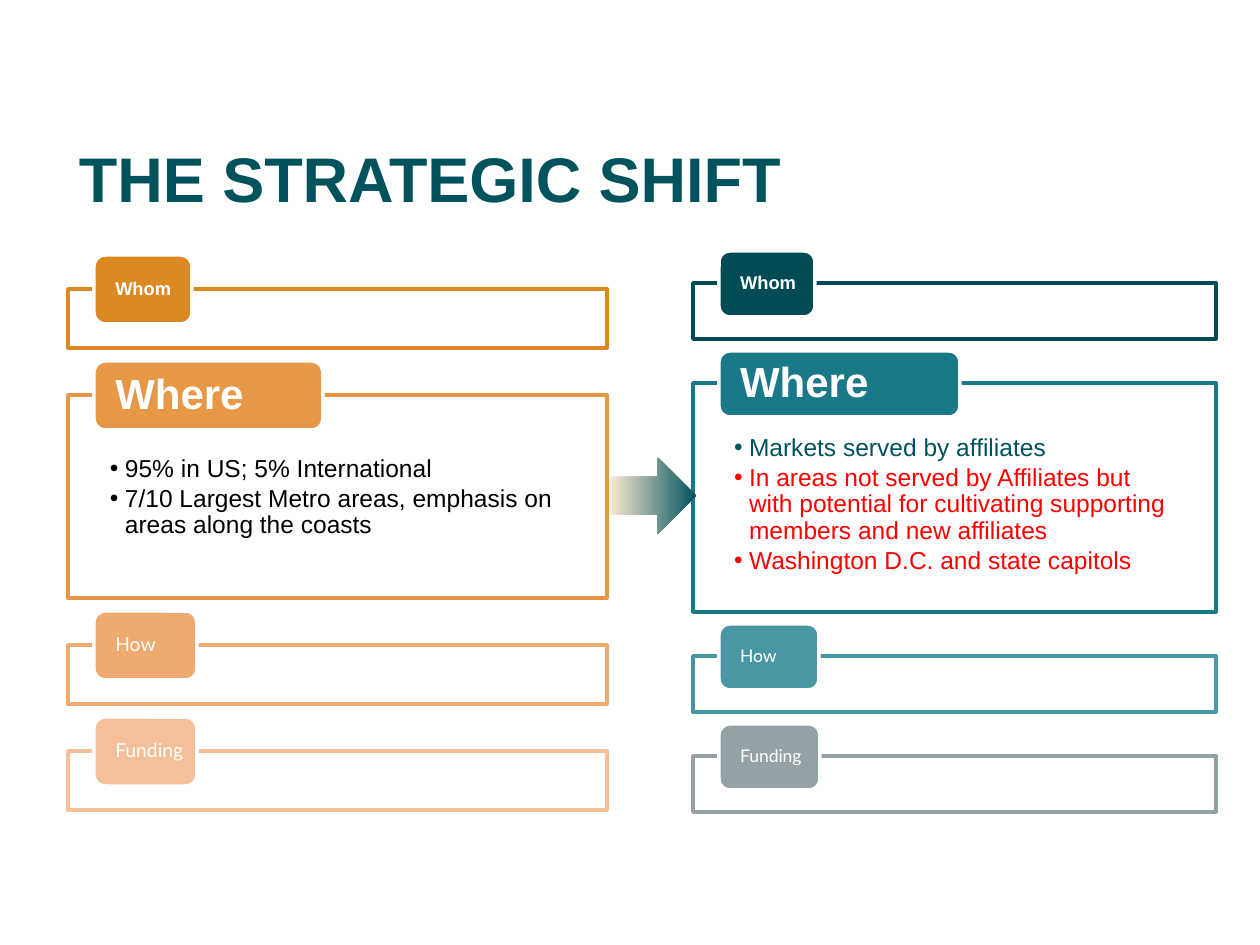
from dataclasses import dataclass

from lxml import etree
from pptx import Presentation
from pptx.dml.color import RGBColor
from pptx.enum.shapes import MSO_SHAPE
from pptx.enum.text import MSO_ANCHOR, PP_ALIGN
from pptx.oxml.ns import qn
from pptx.util import Pt

RECT, TAB, ARROW = MSO_SHAPE.RECTANGLE, MSO_SHAPE.ROUNDED_RECTANGLE, MSO_SHAPE.RIGHT_ARROW
TOP, MIDDLE, LEFT = MSO_ANCHOR.TOP, MSO_ANCHOR.MIDDLE, PP_ALIGN.LEFT


@dataclass(frozen=True)
class Theme:
    font: str = "Arial"
    light_font: str = "Lato"
    white: str = "FFFFFF"
    black: str = "000000"
    teal: str = "00535D"
    red: str = "FF0000"
    sand: str = "FCEAD3"
    title_pt: float = 36
    where_pt: float = 24
    body_pt: float = 14
    whom_pt: float = 10.5
    line_pt: float = 2


T = Theme()


@dataclass(frozen=True)
class Bullet:
    text: str
    color: str


@dataclass(frozen=True)
class Row:
    label: str
    color: str
    height: int
    tab_width: int
    size: float
    font: str = T.font
    bold: bool = True
    bullets: tuple[Bullet, ...] = ()


@dataclass(frozen=True)
class Column:
    left: int
    top: int
    width: int
    gap: int
    tab_rise: int
    tab_height: int
    inset: int
    body_top: int
    rows: tuple[Row, ...]


COLUMNS = (
    Column(68, 289, 539, 47, 34, 69, 42, 61, (
        Row("Whom", "DB8922", 59, 98, T.whom_pt),
        Row("Where", "E69847", 203, 229, T.where_pt, bullets=(
            Bullet("95% in US; 5% International", T.black),
            Bullet("7/10 Largest Metro areas, emphasis on areas along the coasts", T.black))),
        Row("How", "EEAA6F", 59, 103, 11, T.light_font, False),
        Row("Funding", "F5BF9A", 59, 103, 11, T.light_font, False))),
    Column(693, 283, 523, 44, 32, 66, 41, 52, (
        Row("Whom", "004B54", 56, 96, T.whom_pt),
        Row("Where", "197989", 229, 241, T.where_pt, bullets=(
            Bullet("Markets served by affiliates", T.teal),
            Bullet("In areas not served by Affiliates but with potential for cultivating "
                   "supporting members and new affiliates", T.red),
            Bullet("Washington D.C. and state capitols", T.red))),
        Row("How", "4996A5", 56, 100, 10, T.light_font, False),
        Row("Funding", "95A2A5", 56, 101, 10, T.light_font, False))),
)
TAB_INDENT, TAB_PAD, HANGING = 26, 18, 15


def px(n: int) -> int:
    return round(n * 914400 / 126)


def rgb(color: str) -> RGBColor:
    return RGBColor.from_string(color)


def add_box(s, kind, box: tuple[int, ...], fill: str, line: str):
    sp = s.shapes.add_shape(kind, *map(px, box))
    sp.shadow.inherit = False
    sp.fill.solid()
    sp.fill.fore_color.rgb = rgb(fill)
    sp.line.color.rgb = rgb(line)
    sp.line.width = Pt(T.line_pt)
    return sp


def set_frame(tf, anchor, insets: tuple[int, ...]) -> None:
    """Insets run left, top, right, bottom."""
    tf.word_wrap = True
    tf.vertical_anchor = anchor
    tf.margin_left, tf.margin_top, tf.margin_right, tf.margin_bottom = map(px, insets)


def write(p, text: str, size: float, color: str, font: str = T.font, bold: bool = False) -> None:
    p.text = text
    p.alignment = LEFT
    p.line_spacing = 0.9
    f = p.runs[0].font
    f.name, f.size, f.bold = font, Pt(size), bold
    f.color.rgb = rgb(color)


def add_bullet(p) -> None:
    pPr = p._p.get_or_add_pPr()
    pPr.set("marL", str(px(HANGING)))
    pPr.set("indent", str(-px(HANGING)))
    etree.SubElement(pPr, qn("a:buFont")).set("typeface", T.font)
    etree.SubElement(pPr, qn("a:buChar")).set("char", "•")


def draw_row(s, col: Column, row: Row, top: int) -> None:
    frame = add_box(s, RECT, (col.left, top, col.width, row.height), T.white, row.color)
    if row.bullets:
        tf = frame.text_frame
        set_frame(tf, TOP, (col.inset, col.body_top, col.inset, 14))
        for i, bullet in enumerate(row.bullets):
            p = tf.add_paragraph() if i else tf.paragraphs[0]
            add_bullet(p)
            write(p, bullet.text, T.body_pt, bullet.color)
            p.space_after = Pt(2)
    tab = add_box(s, TAB, (col.left + TAB_INDENT, top - col.tab_rise, row.tab_width,
                           col.tab_height), row.color, T.white)
    set_frame(tab.text_frame, MIDDLE, (TAB_PAD, 0, 0, 0))
    write(tab.text_frame.paragraphs[0], row.label, row.size, T.white, row.font, row.bold)


def draw_column(s, col: Column) -> None:
    top = col.top
    for row in col.rows:
        draw_row(s, col, row, top)
        top += row.height + col.gap


def draw_title(s) -> None:
    tf = s.shapes.add_textbox(*map(px, (66, 136, 1119, 82))).text_frame
    set_frame(tf, MIDDLE, (13, 6, 13, 6))
    p = tf.paragraphs[0]
    write(p, "THE STRATEGIC SHIFT", T.title_pt, T.teal, bold=True)
    p.line_spacing = 1.0


def draw_arrow(s) -> None:
    sp = s.shapes.add_shape(ARROW, *map(px, (610, 458, 86, 76)))
    sp.shadow.inherit = False
    sp.line.fill.background()
    sp.fill.gradient()
    sp.fill.gradient_angle = 0
    for stop, color in zip(sp.fill.gradient_stops, (T.sand, T.teal)):
        stop.color.rgb = rgb(color)


def main() -> None:
    prs = Presentation()
    prs.slide_width, prs.slide_height = px(1260), px(945)
    s = prs.slides.add_slide(prs.slide_layouts[6])
    draw_title(s)
    for col in COLUMNS:
        draw_column(s, col)
    draw_arrow(s)
    prs.save("out.pptx")


if __name__ == "__main__":
    main()
